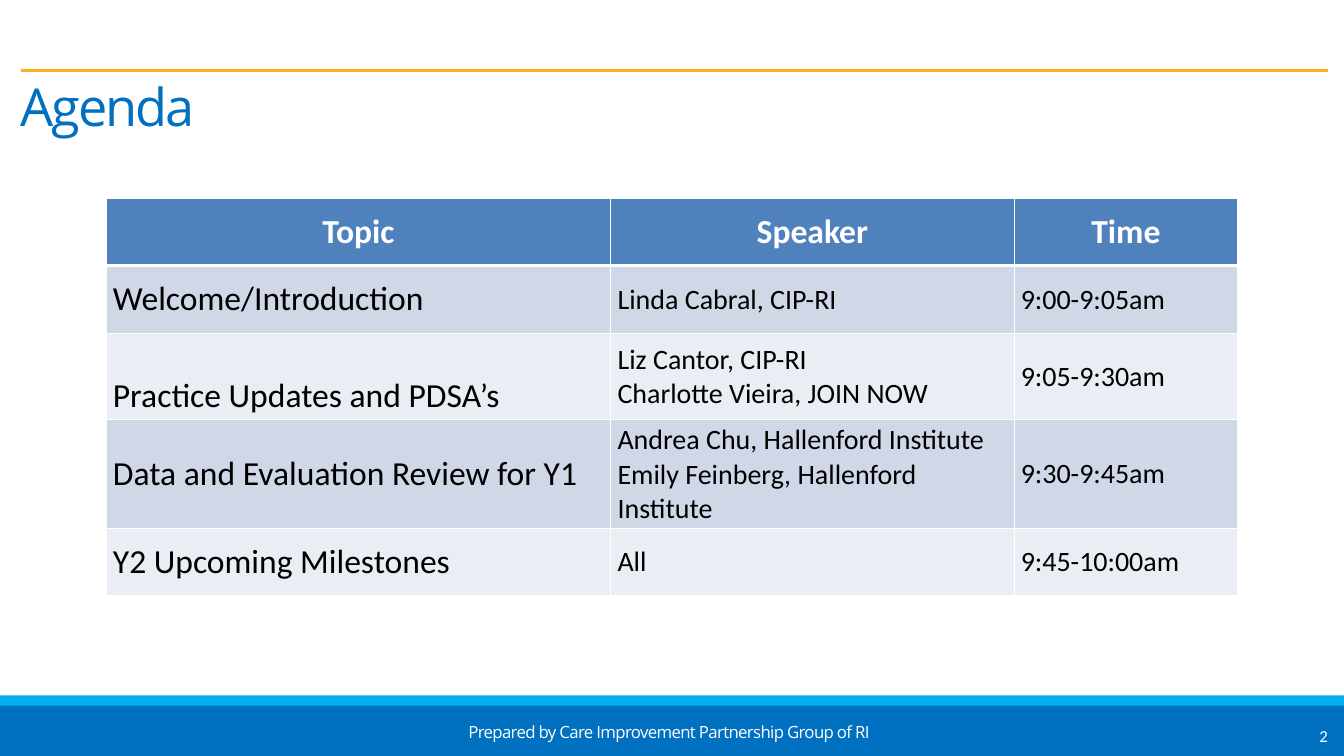
from lxml import etree
from pptx import Presentation
from pptx.dml.color import RGBColor
from pptx.enum.shapes import MSO_CONNECTOR, MSO_SHAPE
from pptx.enum.text import MSO_ANCHOR, PP_ALIGN
from pptx.oxml.ns import qn
from pptx.util import Inches, Pt

LEFT, CENTER, RIGHT = PP_ALIGN.LEFT, PP_ALIGN.CENTER, PP_ALIGN.RIGHT
TOP, MIDDLE, BOTTOM = MSO_ANCHOR.TOP, MSO_ANCHOR.MIDDLE, MSO_ANCHOR.BOTTOM
RECTANGLE, STRAIGHT = MSO_SHAPE.RECTANGLE, MSO_CONNECTOR.STRAIGHT

WIDTH, HEIGHT = Inches(20), Inches(11.25)
BLUE, SKY, GOLD, WHITE, BLACK = "0070C0", "00B0F0", "F7B31D", "FFFFFF", "000000"
HEADER_FILL, BAND_FILLS = "4F81BD", ("D0D8E8", "E9EDF4")

HEADINGS = ("Topic", "Speaker", "Time")
SESSIONS = (
    ("Welcome/Introduction", "Linda Cabral, CIP-RI", "9:00-9:05am"),
    ("Practice Updates and PDSA’s", "Liz Cantor, CIP-RI\nCharlotte Vieira, JOIN NOW", "9:05-9:30am"),
    ("Data and Evaluation Review for Y1",
     "Andrea Chu, Hallenford Institute\nEmily Feinberg, Hallenford Institute", "9:30-9:45am"),
    ("Y2 Upcoming Milestones", "All", "9:45-10:00am"),
)
# Percent of the slide's width and height
COLUMN_WIDTHS = (37.55, 30, 16.65)
ROW_HEIGHTS = (8.93, 8.93, 11.47, 14.31, 8.93)


def color(hex_code):
    return RGBColor.from_string(hex_code)


def across(percent):
    return int(WIDTH * percent / 100)


def down(percent):
    return int(HEIGHT * percent / 100)


def write(frame, text, *, size, ink, font="Calibri", bold=False, align=LEFT,
          leading=None, tracking=None):
    """Put one paragraph per line of text into a text frame."""
    for index, line in enumerate(text.split("\n")):
        paragraph = frame.add_paragraph() if index else frame.paragraphs[0]
        paragraph.alignment = align
        if leading:
            paragraph.line_spacing = Pt(leading)
        run = paragraph.add_run()
        run.text = line
        run.font.name, run.font.size, run.font.bold = font, Pt(size), bold
        run.font.color.rgb = color(ink)
        if tracking:
            run._r.get_or_add_rPr().set("spc", str(round(tracking * 100)))


class AgendaSlide:
    """Style and current slide; all lengths are percent of the slide."""

    heading_font, body_font = "Open Sans", "Calibri"
    topic_size, detail_size = 36, 30

    def __init__(self, slide):
        self.slide = slide

    def band(self, top, height, fill):
        shape = self.slide.shapes.add_shape(RECTANGLE, 0, down(top), WIDTH, down(height))
        shape.shadow.inherit = False
        shape.fill.solid()
        shape.fill.fore_color.rgb = color(fill)
        shape.line.fill.background()

    def rule(self, left, right, top, ink, weight):
        line = self.slide.shapes.add_connector(
            STRAIGHT, across(left), down(top), across(right), down(top))
        line.line.color.rgb = color(ink)
        line.line.width = Pt(weight)
        etree.SubElement(line._element.spPr, qn("a:effectLst"))

    def text(self, left, top, width, height, words, *, anchor=TOP, inset=0, **style):
        box = self.slide.shapes.add_textbox(across(left), down(top), across(width), down(height))
        frame = box.text_frame
        frame.word_wrap = True
        frame.vertical_anchor = anchor
        frame.margin_left = frame.margin_right = Inches(inset)
        frame.margin_top = frame.margin_bottom = Inches(inset / 2)
        write(frame, words, **style)

    def cell(self, cell, words, fill, borders, anchor=MIDDLE, **style):
        properties = cell._tc.get_or_add_tcPr()
        for side, weight in borders.items():
            border = etree.SubElement(properties, qn(f"a:ln{side}"), w=str(Pt(weight)))
            paint = etree.SubElement(border, qn("a:solidFill"))
            etree.SubElement(paint, qn("a:srgbClr"), val=WHITE)
        cell.fill.solid()
        cell.fill.fore_color.rgb = color(fill)
        cell.vertical_anchor = anchor
        write(cell.text_frame, words, font=self.body_font, **style)

    def agenda(self, left, top, headings, sessions):
        table = self.slide.shapes.add_table(
            len(sessions) + 1, len(headings), across(left), down(top),
            across(sum(COLUMN_WIDTHS)), down(sum(ROW_HEIGHTS))).table
        for column, width in zip(table.columns, COLUMN_WIDTHS):
            column.width = across(width)
        for row, height in zip(table.rows, ROW_HEIGHTS):
            row.height = down(height)

        # Header row, parted from the sessions by a heavier line
        for c, heading in enumerate(headings):
            self.cell(table.cell(0, c), heading, HEADER_FILL, dict(L=1, R=1, T=1, B=3),
                      size=self.topic_size, ink=WHITE, bold=True, align=CENTER)

        # Sessions in alternating bands
        for r, session in enumerate(sessions, start=1):
            borders = dict(L=1, R=1, T=3 if r == 1 else 1, B=1)
            for c, words in enumerate(session):
                is_updates = words.startswith("Practice Updates")
                self.cell(table.cell(r, c), words, BAND_FILLS[(r - 1) % 2], borders,
                          anchor=BOTTOM if is_updates else MIDDLE, ink=BLACK,
                          size=self.detail_size if c else self.topic_size)


def main():
    deck = Presentation()
    deck.slide_width, deck.slide_height = WIDTH, HEIGHT
    page = AgendaSlide(deck.slides.add_slide(deck.slide_layouts[6]))

    # Footer bands
    page.band(92, 8, SKY)
    page.band(93.33, 6.67, BLUE)

    # Title under its rule
    page.rule(1.55, 98.8, 9.33, GOLD, 2.25)
    page.text(1.55, 9.78, 93, 8.36, "Agenda", size=56, ink=BLUE,
              font=page.heading_font, leading=67.2, tracking=-2.2)

    # Footer text and page number
    page.text(34.85, 95.47, 30.3, 2.49, "Prepared by Care Improvement Partnership Group of RI",
              size=18, ink=WHITE, font=page.heading_font, leading=21.6, tracking=-0.7)
    page.text(87.65, 95.56, 11.65, 3.56, "2", anchor=MIDDLE, inset=0.1,
              size=18, ink=WHITE, font=page.body_font, align=RIGHT)

    # Agenda table
    page.agenda(7.9, 26.22, HEADINGS, SESSIONS)
    deck.save("out.pptx")


if __name__ == "__main__":
    main()
